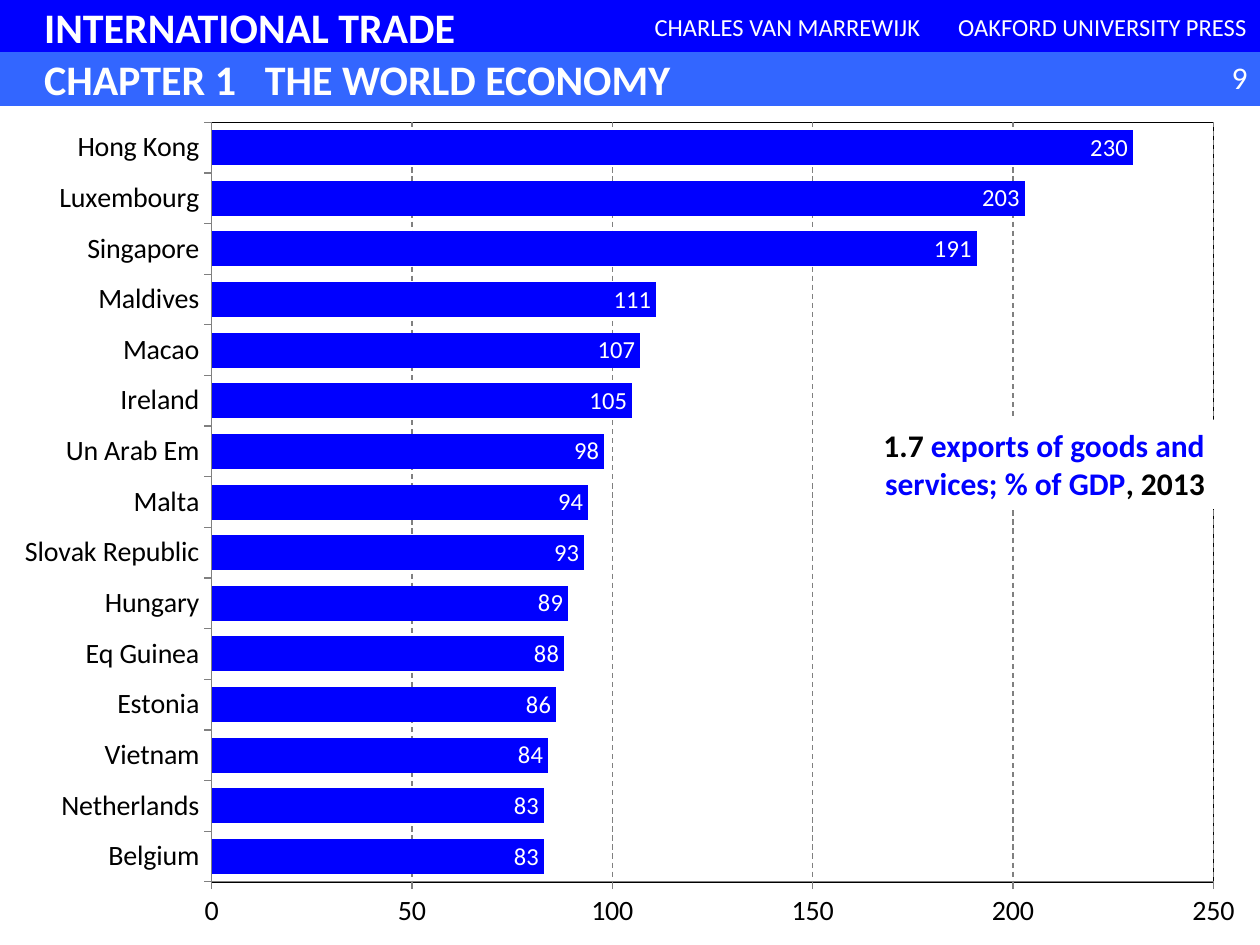
from lxml import etree
from pptx import Presentation
from pptx.chart.data import CategoryChartData
from pptx.dml.color import RGBColor
from pptx.enum.chart import XL_CHART_TYPE, XL_LABEL_POSITION, XL_TICK_MARK
from pptx.enum.dml import MSO_LINE
from pptx.enum.shapes import MSO_SHAPE
from pptx.enum.text import MSO_ANCHOR, PP_ALIGN
from pptx.oxml import parse_xml
from pptx.oxml.ns import qn
from pptx.util import Cm, Pt

RECT = MSO_SHAPE.RECTANGLE
BAR = XL_CHART_TYPE.BAR_CLUSTERED
INSIDE = XL_LABEL_POSITION.INSIDE_END
OUT, NONE = XL_TICK_MARK.OUTSIDE, XL_TICK_MARK.NONE
DASH = MSO_LINE.DASH
TOP, MID = MSO_ANCHOR.TOP, MSO_ANCHOR.MIDDLE
LEFT, CENTER, RIGHT = PP_ALIGN.LEFT, PP_ALIGN.CENTER, PP_ALIGN.RIGHT
BLUE = RGBColor(0x00, 0x00, 0xFF)
LIGHT = RGBColor(0x33, 0x66, 0xFF)
WHITE = RGBColor(0xFF, 0xFF, 0xFF)
BLACK = RGBColor(0x00, 0x00, 0x00)
GRAY = RGBColor(0x80, 0x80, 0x80)
FONT = "Calibri"
NS = "http://schemas.openxmlformats.org/drawingml/2006/chart"
MAIN = "http://schemas.openxmlformats.org/drawingml/2006/main"
ROWS = [
    ("Belgium", 83), ("Netherlands", 83), ("Vietnam", 84), ("Estonia", 86),
    ("Eq Guinea", 88), ("Hungary", 89), ("Slovak Republic", 93),
    ("Malta", 94), ("Un Arab Em", 98), ("Ireland", 105), ("Macao", 107),
    ("Maldives", 111), ("Singapore", 191), ("Luxembourg", 203),
    ("Hong Kong", 230),
]


def style(font, size, color, bold=False):
    font.name, font.size, font.bold = FONT, Pt(size), bold
    font.color.rgb = color


def write(frame, parts, size=14, color=WHITE, bold=False, align=LEFT,
          anchor=MID, inset=0.25, after=0, tab=None):
    frame.word_wrap = True
    frame.vertical_anchor = anchor
    frame.margin_left = Cm(inset)
    para = frame.paragraphs[0]
    para.alignment = align
    para.space_after = Pt(after)
    if tab:
        stops = etree.SubElement(para._p.get_or_add_pPr(), qn("a:tabLst"))
        etree.SubElement(stops, qn("a:tab"), pos=str(Cm(tab)), algn="l")
    for part in [(parts, color)] if isinstance(parts, str) else parts:
        run = para.add_run()
        run.text = part[0]
        style(run.font, size, part[1], bold)


class Deck:
    """Holds the style and the current slide."""

    def __init__(self, wide, high):
        self.show = Presentation()
        self.show.slide_width, self.show.slide_height = Cm(wide), Cm(high)
        self.slide = self.show.slides.add_slide(self.show.slide_layouts[6])

    def box(self, place, fill, text, line=None, **form):
        shape = self.slide.shapes.add_shape(RECT, *map(Cm, place))
        shape.shadow.inherit = False
        shape.fill.solid()
        shape.fill.fore_color.rgb = fill
        if line:
            shape.line.color.rgb = line
            shape.line.width = Pt(0.75)
        else:
            shape.line.fill.background()
        write(shape.text_frame, text, **form)

    def label(self, place, text, **form):
        area = self.slide.shapes.add_textbox(*map(Cm, place))
        write(area.text_frame, text, **form)

    def bars(self, place, rows):
        data = CategoryChartData(number_format="#,##0")
        data.categories = [name for name, _ in rows]
        data.add_series("Series 1", [value for _, value in rows])
        chart = self.slide.shapes.add_chart(BAR, *map(Cm, place), data).chart
        chart.has_legend = chart.has_title = False
        style(chart.font, 10, BLACK)
        plot = chart.plots[0]
        plot.gap_width = 45
        plot.vary_by_categories = False
        bar = plot.series[0]
        bar.format.fill.solid()
        bar.format.fill.fore_color.rgb = BLUE
        tags = bar.data_labels
        tags.show_value = True
        tags.position = INSIDE
        tags.number_format, tags.number_format_is_linked = "#,##0", False
        style(tags.font, 14, WHITE)
        for axis in (chart.category_axis, chart.value_axis):
            style(axis.tick_labels.font, 16, BLACK)
            axis.major_tick_mark, axis.minor_tick_mark = OUT, NONE
            axis.format.line.color.rgb = GRAY
        axis = chart.value_axis
        axis.minimum_scale, axis.maximum_scale, axis.major_unit = 0, 250, 50
        axis.tick_labels.number_format = "#,##0"
        axis.tick_labels.number_format_is_linked = False
        axis.has_major_gridlines = True
        grid = axis.major_gridlines.format.line
        grid.color.rgb, grid.dash_style = GRAY, DASH
        self.frame(chart, x=0.168, y=0.021, w=0.795, h=0.904)

    def frame(self, chart, **spot):
        area = chart.element.find(".//" + qn("c:plotArea"))
        for old in area.findall(qn("c:layout")):
            area.remove(old)
        modes = '<c:xMode val="edge"/><c:yMode val="edge"/>'
        sizes = "".join(f'<c:{key} val="{val}"/>' for key, val in spot.items())
        area.insert(0, parse_xml(
            f'<c:layout xmlns:c="{NS}"><c:manualLayout>'
            f'<c:layoutTarget val="inner"/>{modes}{sizes}'
            '</c:manualLayout></c:layout>'))
        area.append(parse_xml(
            f'<c:spPr xmlns:c="{NS}" xmlns:a="{MAIN}"><a:noFill/>'
            f'<a:ln w="9525"><a:solidFill><a:srgbClr val="{BLACK}"/>'
            '</a:solidFill></a:ln></c:spPr>'))


def main():
    deck = Deck(25.4, 19.05)
    band = 1.06
    head = dict(size=24, bold=True, inset=0.89)
    deck.box((0, 0, 25.4, band), BLUE, "INTERNATIONAL TRADE", **head)
    names = ("CHARLES VAN MARREWIJK", "OAKFORD UNIVERSITY PRESS")
    for spot, name in enumerate(names):
        deck.box((12.7 + 6.35 * spot, 0, 6.35, band), BLUE, name,
                 line=BLUE, align=CENTER)
    deck.box((0, band, 25.4, band), LIGHT, "CHAPTER 1\tTHE WORLD ECONOMY",
             line=LIGHT, tab=4.45, **head)
    deck.label((23.7, 1.04, 1.7, 1.02), "9", size=18, align=RIGHT, anchor=TOP)
    deck.bars((0, 2.11, 25.4, 16.94), ROWS)
    deck.box((17.35, 8.46, 7.19, 1.8), WHITE,
             [("1.7 ", BLACK), ("exports of goods and services; % of GDP", BLUE),
              (", 2013", BLACK)],
             size=18, bold=True, align=RIGHT, anchor=TOP, after=6)
    deck.show.save("out.pptx")


if __name__ == "__main__":
    main()
